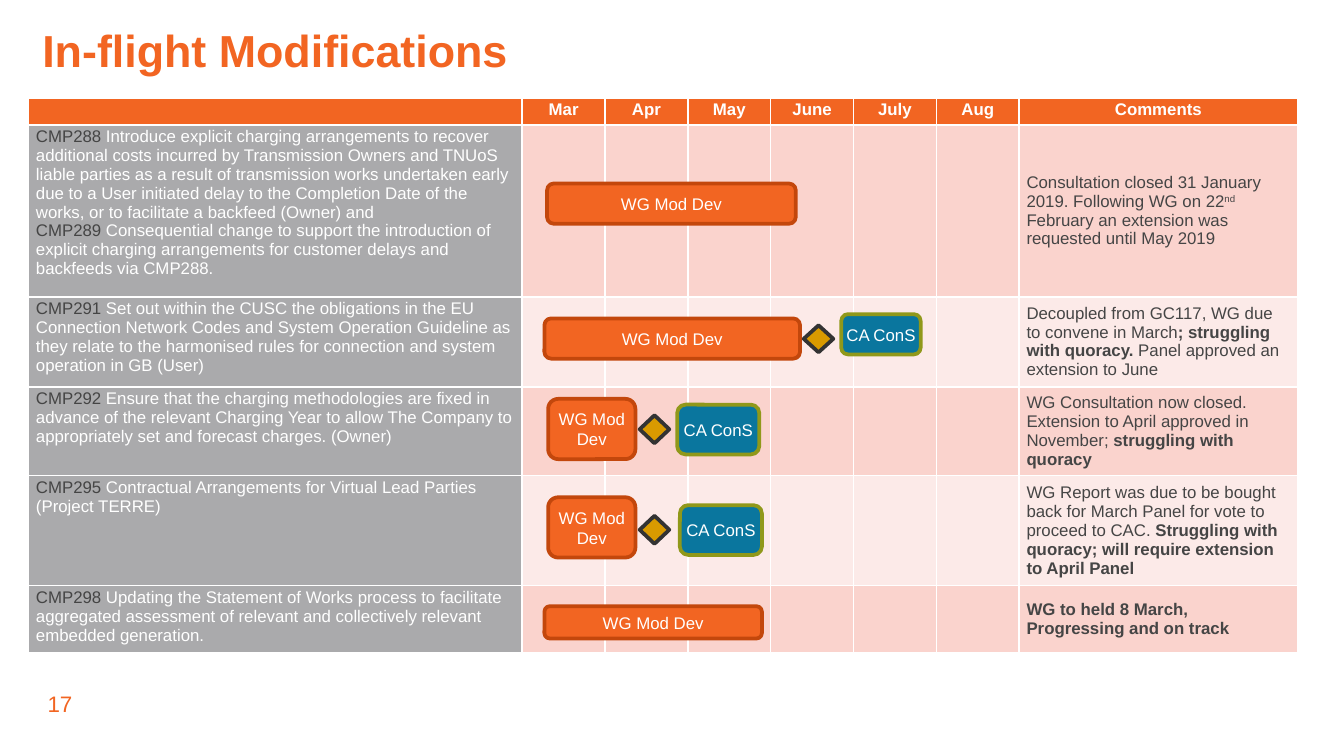
import pptx
import pptx.util
import pptx.dml.color
import pptx.enum.shapes
import pptx.enum.text
import pptx.oxml.ns
import lxml.etree

Cm = pptx.util.Cm
Pt = pptx.util.Pt
ALIGN = pptx.enum.text.PP_ALIGN
ANCHOR = pptx.enum.text.MSO_ANCHOR
SHAPE = pptx.enum.shapes.MSO_SHAPE
COLORS = {
    "orange": "F26522", "orange_line": "C3470C", "blue": "0A769E",
    "green_line": "90981A", "gold": "D99A00", "dark_line": "333333",
    "text": "454545", "white": "FFFFFF", "gray": "AAAAAC",
    "pink": "FAD3CD", "pale_pink": "FCEAE8",
}


def rgb(name):
    return pptx.dml.color.RGBColor.from_string(COLORS[name])


def write_text(frame, *paragraphs, size=9, color="text", align=ALIGN.LEFT, bold=False, spacing=None):
    """Each paragraph is a list of (text, overrides) runs."""
    frame.word_wrap = True
    for index, runs in enumerate(paragraphs):
        paragraph = frame.add_paragraph() if index else frame.paragraphs[0]
        paragraph.alignment = align
        if spacing:
            paragraph.line_spacing = spacing
        for text, overrides in runs:
            run = paragraph.add_run()
            run.text = text
            run.font.name = "Arial"
            run.font.size = Pt(size)
            run.font.bold = overrides.get("bold", bold)
            run.font.color.rgb = rgb(overrides.get("color", color))
            if overrides.get("superscript"):
                run.font._element.set("baseline", "30000")


presentation = pptx.Presentation()
presentation.slide_width, presentation.slide_height = Cm(25.4), Cm(14.29)
slide = presentation.slides.add_slide(presentation.slide_layouts[5])

# Title
title = slide.shapes.title
title.left, title.top, title.width, title.height = Cm(0.8), Cm(0.62), Cm(16.87), Cm(0.97)
# Slide number
number = slide.shapes.add_textbox(Cm(0.9), Cm(13.05), Cm(2.31), Cm(0.51))
for shape in (title, number):
    frame = shape.text_frame
    frame.margin_left = frame.margin_right = frame.margin_top = frame.margin_bottom = 0
    frame.vertical_anchor = ANCHOR.TOP
title.text_frame.auto_size = pptx.enum.text.MSO_AUTO_SIZE.NONE
write_text(title.text_frame, [("In-flight Modifications", {})],
           size=24, color="orange", bold=True, spacing=0.8)
write_text(number.text_frame, [("17", {})], size=12, color="orange")

# Table content: modifications as (code, description), comments as runs
months = ["Mar", "Apr", "May", "June", "July", "Aug"]
strong = {"bold": True}
modifications = [
    ([("CMP288 ", "Introduce explicit charging arrangements to recover additional costs incurred by "
       "Transmission Owners and TNUoS liable parties as a result of transmission works undertaken "
       "early due to a User initiated delay to the Completion Date of the works, or to facilitate "
       "a backfeed (Owner) and"),
      ("CMP289 ", "Consequential change to support the introduction of explicit charging "
       "arrangements for customer delays and backfeeds via CMP288.")],
     [("Consultation closed 31 January 2019. Following WG on 22", {}), ("nd", {"superscript": True}),
      (" February an extension was requested until May 2019", {})]),
    ([("CMP291 ", "Set out within the CUSC the obligations in the EU Connection Network Codes and "
       "System Operation Guideline as they relate to the harmonised rules for connection and "
       "system operation in GB (User)")],
     [("Decoupled from GC117, WG due to convene in March", {}),
      ("; struggling with quoracy. ", strong), ("Panel approved an extension to June", {})]),
    ([("CMP292 ", "Ensure that the charging methodologies are fixed in advance of the relevant "
       "Charging Year to allow The Company to appropriately set and forecast charges. (Owner)")],
     [("WG Consultation now closed. Extension to April approved in November; ", {}),
      ("struggling with quoracy", strong)]),
    ([("CMP295 ", "Contractual Arrangements for Virtual Lead Parties (Project TERRE)")],
     [("WG Report was due to be bought back for March Panel for vote to proceed to CAC. ", {}),
      ("Struggling with quoracy; will require extension to April Panel", strong)]),
    ([("CMP298 ", "Updating the Statement of Works process to facilitate aggregated assessment of "
       "relevant and collectively relevant embedded generation.")],
     [("WG to held 8 March, Progressing and on track", strong)]),
]

# Table grid
column_widths = [9.33] + [1.565] * len(months) + [5.26]
row_heights = [0.51, 3.25, 1.7, 1.68, 2.08, 1.27]
table = slide.shapes.add_table(
    len(row_heights), len(column_widths), Cm(0.54), Cm(1.85),
    Cm(sum(column_widths)), Cm(sum(row_heights))).table
for column, width in zip(table.columns, column_widths):
    column.width = Cm(width)
for row, height in zip(table.rows, row_heights):
    row.height = Cm(height)

# Cell borders, fills and margins
for row_index, row in enumerate(table.rows):
    for column_index, cell in enumerate(row.cells):
        cell.margin_left = cell.margin_right = Cm(0.14)
        cell.margin_top = cell.margin_bottom = Cm(0.05)
        properties = cell._tc.get_or_add_tcPr()
        for side in "LRTB":
            line = lxml.etree.SubElement(properties, pptx.oxml.ns.qn(f"a:ln{side}"), w=str(Pt(1)))
            fill = lxml.etree.SubElement(line, pptx.oxml.ns.qn("a:solidFill"))
            lxml.etree.SubElement(fill, pptx.oxml.ns.qn("a:srgbClr"), val=COLORS["white"])
        cell.fill.solid()
        if row_index == 0:
            color = "orange"
        elif column_index == 0:
            color = "gray"
        else:
            color = "pink" if row_index % 2 else "pale_pink"
        cell.fill.fore_color.rgb = rgb(color)
        # Empty cells keep the small text size so that rows stay low
        lxml.etree.SubElement(cell.text_frame.paragraphs[0]._p,
                              pptx.oxml.ns.qn("a:endParaRPr"), sz="900")

# Table text
for column_index, heading in enumerate(months + ["Comments"], start=1):
    write_text(table.cell(0, column_index).text_frame, [(heading, {})],
               color="white", align=ALIGN.CENTER, bold=True)
for row_index, (descriptions, comment) in enumerate(modifications, start=1):
    write_text(table.cell(row_index, 0).text_frame,
               *[[(code, {}), (description, {"color": "white"})] for code, description in descriptions])
    comment_cell = table.cell(row_index, len(column_widths) - 1)
    comment_cell.vertical_anchor = ANCHOR.MIDDLE
    write_text(comment_cell.text_frame, comment)

# Timeline items: kind, left, top, width, height
kinds = {
    "development": (SHAPE.ROUNDED_RECTANGLE, "orange", "orange_line", "WG Mod Dev"),
    "consultation": (SHAPE.ROUNDED_RECTANGLE, "blue", "green_line", "CA ConS"),
    "milestone": (SHAPE.DIAMOND, "gold", "dark_line", ""),
}
timeline = [
    ("development", 10.34, 3.47, 4.7, 0.76),
    ("development", 10.29, 6.02, 4.83, 0.76),
    ("milestone", 15.19, 6.15, 0.56, 0.51),
    ("consultation", 15.9, 5.94, 1.5, 0.76),
    ("development", 10.36, 7.54, 1.65, 1.14),
    ("milestone", 12.09, 7.85, 0.56, 0.53),
    ("consultation", 12.8, 7.65, 1.55, 0.94),
    ("development", 10.36, 9.4, 1.65, 1.14),
    ("milestone", 12.09, 9.75, 0.56, 0.53),
    ("consultation", 12.85, 9.55, 1.55, 0.94),
    ("development", 10.29, 11.46, 4.11, 0.61),
]
for kind, left, top, width, height in timeline:
    preset, fill_color, line_color, label = kinds[kind]
    shape = slide.shapes.add_shape(preset, Cm(left), Cm(top), Cm(width), Cm(height))
    shape.shadow.inherit = False
    shape.fill.solid()
    shape.fill.fore_color.rgb = rgb(fill_color)
    shape.line.color.rgb = rgb(line_color)
    shape.line.width = Pt(2)
    if label:
        frame = shape.text_frame
        frame.margin_left = frame.margin_right = frame.margin_top = frame.margin_bottom = 0
        frame.vertical_anchor = ANCHOR.MIDDLE
        write_text(frame, [(label, {})], color="white", align=ALIGN.CENTER)

presentation.save("out.pptx")
